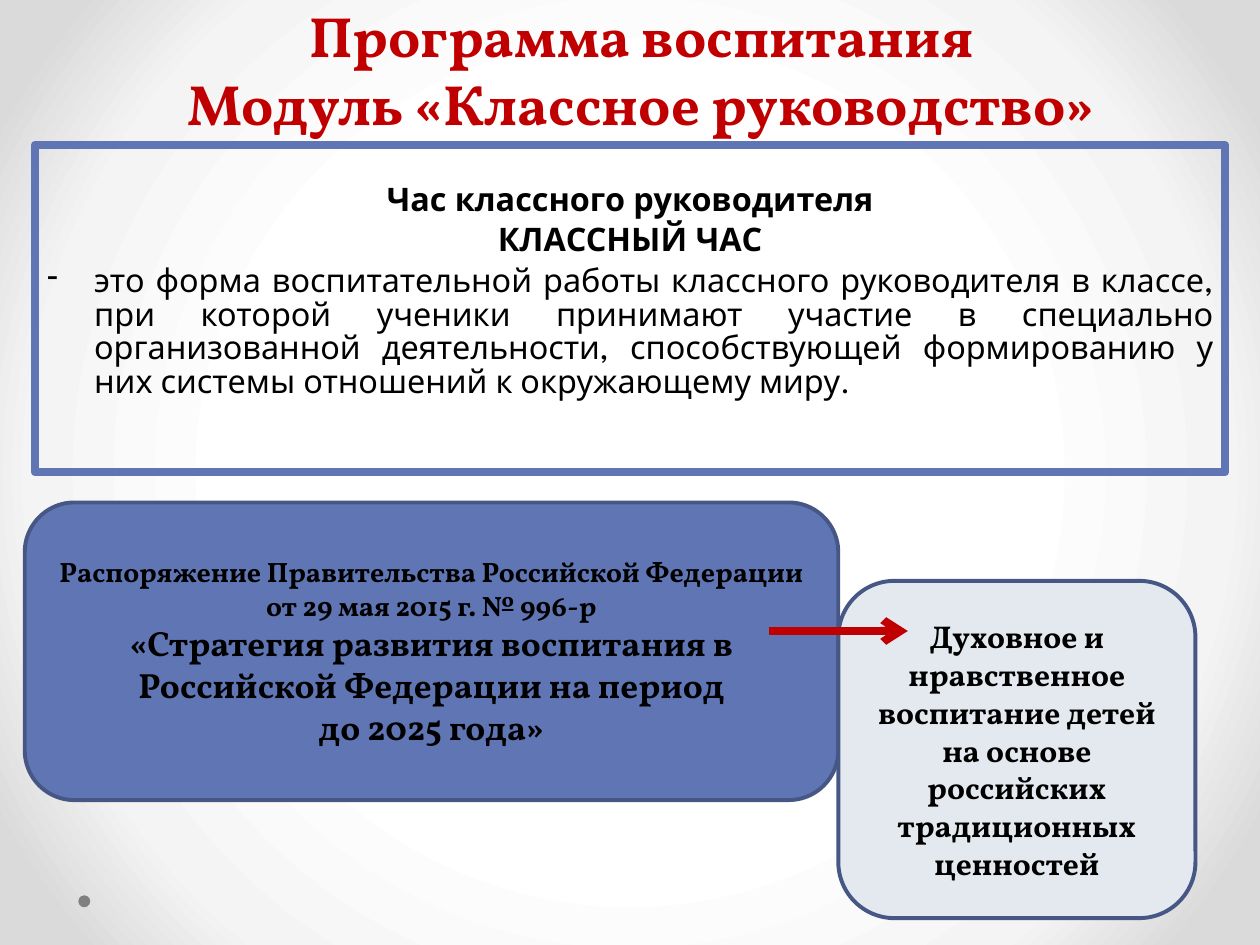
import pptx
import pptx.util
import pptx.dml.color
import pptx.enum.shapes
import pptx.enum.text
import pptx.oxml
import pptx.oxml.ns
from pptx.util import Cm, Pt

COLORS = {
    "red": "C00000", "blue": "6076B4", "navy": "475785", "pale": "E4E9EF",
    "black": "000000", "gray": "808080",
}
BACKDROP = [(50, "FFFFFF"), (76, "F4F4F4"), (92, "DADADA")]
SERIF, SANS = "Vollkorn", "League Spartan"

TITLE = "Программа воспитания\vМодуль «Классное руководство»"
CLASS_HOUR = ["Час классного руководителя", "КЛАССНЫЙ ЧАС"]
DEFINITION = (
    "это форма воспитательной работы классного руководителя в классе, "
    "при которой ученики принимают участие в специально организованной "
    "деятельности, способствующей формированию у них системы отношений "
    "к окружающему миру."
)
DECREE = "Распоряжение Правительства Российской Федерации от 29 мая 2015 г. № 996-р"
STRATEGY = [
    "«Стратегия развития воспитания в Российской Федерации на период",
    "до 2025 года»",
]
VALUES = (
    "Духовное и нравственное воспитание детей на основе "
    "российских традиционных ценностей"
)

SHAPE = pptx.enum.shapes.MSO_SHAPE
ALIGN = pptx.enum.text.PP_ALIGN
ANCHOR = pptx.enum.text.MSO_ANCHOR


def rgb(name):
    return pptx.dml.color.RGBColor.from_string(COLORS[name])


def xml(markup):
    return pptx.oxml.parse_xml(
        markup.replace(">", " " + pptx.oxml.ns.nsdecls("a") + ">", 1)
        if "/>" not in markup.split(">")[0] + ">"
        else markup.replace("/>", " " + pptx.oxml.ns.nsdecls("a") + "/>", 1)
    )


def add_text(frame, text, size, font=SERIF, color="black", bold=True,
             align=ALIGN.CENTER, before=0, spacing=1, dash=False):
    paragraph = frame.paragraphs[0]
    if paragraph.runs:
        paragraph = frame.add_paragraph()
    paragraph.text = text
    paragraph.alignment = align
    paragraph.space_before = Pt(before)
    paragraph.line_spacing = spacing
    for run in paragraph.runs:
        run.font.name, run.font.size, run.font.bold = font, Pt(size), bold
        run.font.color.rgb = rgb(color)
    if dash:
        properties = paragraph._p.get_or_add_pPr()
        properties.set("marL", str(Cm(0.95)))
        properties.set("indent", str(-Cm(0.95)))
        properties.append(xml('<a:buChar char="-"/>'))


def add_panel(slide, kind, box, fill=None, line=None, width=0, anchor=ANCHOR.MIDDLE):
    panel = slide.shapes.add_shape(kind, *(Cm(n) for n in box))
    panel.shadow.inherit = False
    if fill:
        panel.fill.solid()
        panel.fill.fore_color.rgb = rgb(fill)
    else:
        panel.fill.background()
    if line:
        panel.line.color.rgb = rgb(line)
        panel.line.width = Pt(width)
    else:
        panel.line.fill.background()
    panel.text_frame.word_wrap = True
    panel.text_frame.vertical_anchor = anchor
    return panel


def paint_backdrop(slide):
    slide.background.fill.gradient()
    gradient = next(slide.background._cSld.iter(pptx.oxml.ns.qn("a:gradFill")))
    for part in list(gradient):
        gradient.remove(part)
    stops = "".join(
        f'<a:gs pos="{at * 1000}"><a:srgbClr val="{color}"/></a:gs>'
        for at, color in BACKDROP
    )
    gradient.append(xml(f"<a:gsLst>{stops}</a:gsLst>"))
    gradient.append(xml(
        '<a:path path="circle">'
        '<a:fillToRect l="50000" t="50000" r="50000" b="50000"/></a:path>'
    ))


def main():
    deck = pptx.Presentation()
    deck.slide_width, deck.slide_height = Cm(25.4), Cm(19.05)
    slide = deck.slides.add_slide(deck.slide_layouts[6])
    paint_backdrop(slide)
    add_panel(slide, SHAPE.OVAL, (1.58, 18.05, 0.24, 0.24), fill="gray")

    title = slide.shapes.add_textbox(Cm(1.5), Cm(0.53), Cm(22.86), Cm(2.36)).text_frame
    title.word_wrap = True
    title.vertical_anchor = ANCHOR.BOTTOM
    add_text(title, TITLE, 32.4, color="red")

    class_hour = add_panel(slide, SHAPE.RECTANGLE, (0.7, 2.92, 24, 6.6),
                           line="blue", width=4.5, anchor=ANCHOR.TOP).text_frame
    class_hour.margin_top = Cm(0.8)
    body = dict(size=18.5, font=SANS, before=3.7, spacing=0.87)
    for heading in CLASS_HOUR:
        add_text(class_hour, heading, **body)
    add_text(class_hour, DEFINITION, bold=False, align=ALIGN.JUSTIFY, dash=True, **body)

    strategy = add_panel(slide, SHAPE.ROUNDED_RECTANGLE, (0.5, 10.13, 16.4, 6),
                         fill="blue", line="navy", width=2.25).text_frame
    add_text(strategy, DECREE, 16)
    for part in STRATEGY:
        add_text(strategy, part, 20)

    values = add_panel(slide, SHAPE.ROUNDED_RECTANGLE, (16.9, 11.71, 7.2, 6.8),
                       fill="pale", line="navy", width=2.25).text_frame
    add_text(values, VALUES, 18)

    arrow = slide.shapes.add_connector(
        pptx.enum.shapes.MSO_CONNECTOR.STRAIGHT,
        Cm(15.5), Cm(12.72), Cm(18.3), Cm(12.72))
    arrow.line.color.rgb = rgb("red")
    arrow.line.width = Pt(4.5)
    arrow.line._get_or_add_ln().append(xml('<a:tailEnd type="arrow"/>'))
    arrow._element.spPr.append(xml("<a:effectLst/>"))

    deck.save("out.pptx")


if __name__ == "__main__":
    main()
